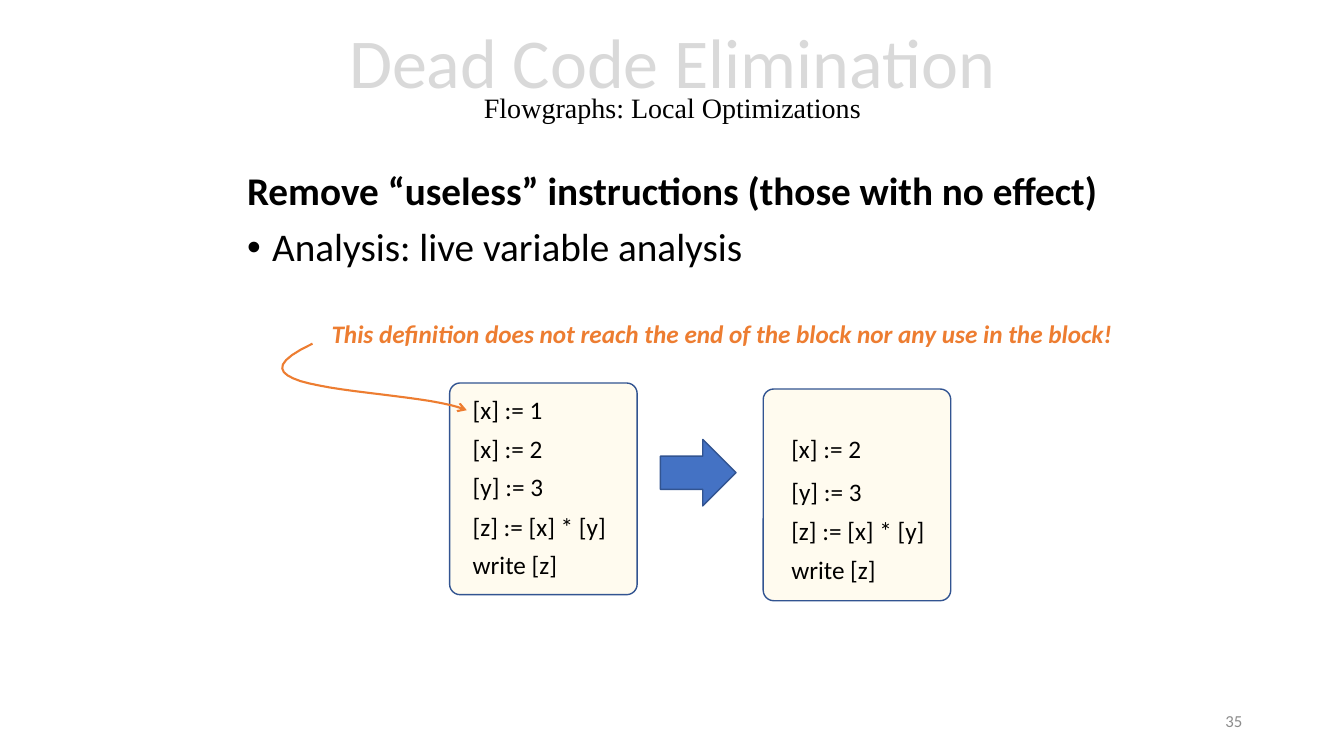
from lxml.etree import SubElement
from pptx import Presentation
from pptx.dml.color import RGBColor
from pptx.enum.shapes import MSO_SHAPE
from pptx.enum.text import MSO_ANCHOR, MSO_AUTO_SIZE, PP_ALIGN
from pptx.oxml.ns import qn
from pptx.util import Inches, Pt

BLACK = RGBColor(0x00, 0x00, 0x00)
PALE = RGBColor(0xD9, 0xD9, 0xD9)
GRAY = RGBColor(0x8C, 0x8C, 0x8C)
CREAM = RGBColor(0xFF, 0xF2, 0xCC)
BLUE = RGBColor(0x44, 0x72, 0xC4)
NAVY = RGBColor(0x32, 0x54, 0x91)
ORANGE = RGBColor(0xED, 0x7D, 0x31)

deck = Presentation()
deck.slide_width = Inches(13.33)
deck.slide_height = Inches(7.5)
slide = deck.slides.add_slide(deck.slide_layouts[1])
shapes = slide.shapes


def place(shape, left, top, width, height):
    shape.left, shape.top = Inches(left), Inches(top)
    shape.width, shape.height = Inches(width), Inches(height)


def label(text, left, top, width, size=18, color=BLACK):
    box = shapes.add_textbox(Inches(left), Inches(top), Inches(width), Inches(0.4))
    para = box.text_frame.paragraphs[0]
    para.text = text
    para.font.name = "Calibri"
    para.font.size = Pt(size)
    para.font.color.rgb = color
    return box


title = shapes.title
place(title, 1.67, 0.09, 10, 1.45)
title.text_frame.auto_size = MSO_AUTO_SIZE.NONE
title.text_frame.vertical_anchor = MSO_ANCHOR.MIDDLE
head = title.text_frame.paragraphs[0]
head.alignment = PP_ALIGN.CENTER
head.line_spacing = 0.7
for text, size, face, color in [
    ("Dead Code Elimination", 50, "Calibri", PALE),
    ("Flowgraphs: Local Optimizations", 20, "Times New Roman", BLACK),
]:
    if head.runs:
        head.add_line_break()
    run = head.add_run()
    run.text = text
    run.font.size = Pt(size)
    run.font.name = face
    run.font.color.rgb = color

body = slide.placeholders[1]
place(body, 2.35, 1.65, 8.79, 4.76)
frame = body.text_frame
frame.auto_size = MSO_AUTO_SIZE.NONE
frame.text = "Remove “useless” instructions (those with no effect)\nAnalysis: live variable analysis"
for para, bold, indent in zip(frame.paragraphs, (True, False), (0, 0.25)):
    para.line_spacing = 0.9
    para.space_before = Pt(10)
    para.font.name = "Calibri"
    para.font.size = Pt(28)
    para.font.bold = bold
    para.font.color.rgb = BLACK
    props = para._p.get_or_add_pPr()
    props.set("marL", str(Inches(indent)))
    props.set("indent", str(-Inches(indent)))
    if bold:
        mark = props.makeelement(qn("a:buNone"), {})
    else:
        mark = props.makeelement(qn("a:buChar"), {"char": "•"})
    props.find(qn("a:defRPr")).addprevious(mark)

for left, top in [(7.57, 3.86), (4.46, 3.8)]:
    block = shapes.add_shape(
        MSO_SHAPE.ROUNDED_RECTANGLE, Inches(left), Inches(top), Inches(1.86), Inches(2.1)
    )
    block.adjustments[0] = 0.056
    block.shadow.inherit = False
    block.fill.solid()
    block.fill.fore_color.rgb = CREAM
    tint = block._element.spPr.find(qn("a:solidFill"))[0]
    SubElement(tint, qn("a:alpha"), val="30000")
    block.line.color.rgb = NAVY
    block.line.width = Pt(1)

code = [("[x] := 1", 0.9), ("[x] := 2", 0.9), ("[y] := 3", 0.91),
        ("[z] := [x] * [y]", 1.54), ("write [z]", 1.05)]
old = [3.86, 4.25, 4.63, 5.02, 5.4]
new = [4.25, 4.68, 5.06, 5.45]
for left, lines, tops in [(4.59, code, old), (7.75, code[1:], new)]:
    for (text, width), top in zip(lines, tops):
        label(text, left, top, width).text_frame.word_wrap = False

arrow = shapes.add_shape(
    MSO_SHAPE.RIGHT_ARROW, Inches(6.55), Inches(4.36), Inches(0.75), Inches(0.66)
)
arrow.shadow.inherit = False
arrow.fill.solid()
arrow.fill.fore_color.rgb = BLUE
arrow.line.color.rgb = NAVY
arrow.line.width = Pt(1)

knots = [(3.1, 3.41), (2.03, 3.91), (4.12, 3.85), (4.63, 4.07)]
steps = 24
points = []
for step in range(steps + 1):
    t = step / steps
    parts = [(1 - t) ** 3, 3 * t * (1 - t) ** 2, 3 * t * t * (1 - t), t ** 3]
    points.append(
        [1000 * sum(w * knot[axis] for w, knot in zip(parts, knots)) for axis in (0, 1)]
    )
pen = shapes.build_freeform(*points[0], scale=Inches(1) / 1000)
pen.add_line_segments(points[1:], close=False)
curve = pen.convert_to_shape()
curve.shadow.inherit = False
curve.fill.background()
curve.line.color.rgb = ORANGE
curve.line.width = Pt(1.5)
SubElement(curve._element.spPr.find(qn("a:ln")), qn("a:tailEnd"), type="arrow")

note = label(
    "This definition does not reach the end of the block nor any use in the block!",
    3.19, 3.11, 8.04, color=ORANGE,
)
note.text_frame.word_wrap = False
font = note.text_frame.paragraphs[0].font
font.bold = True
font.italic = True

page = label("35", 9.42, 6.95, 3, 12, GRAY)
page.text_frame.word_wrap = True
page.text_frame.vertical_anchor = MSO_ANCHOR.MIDDLE
page.text_frame.paragraphs[0].alignment = PP_ALIGN.RIGHT

deck.save("out.pptx")
